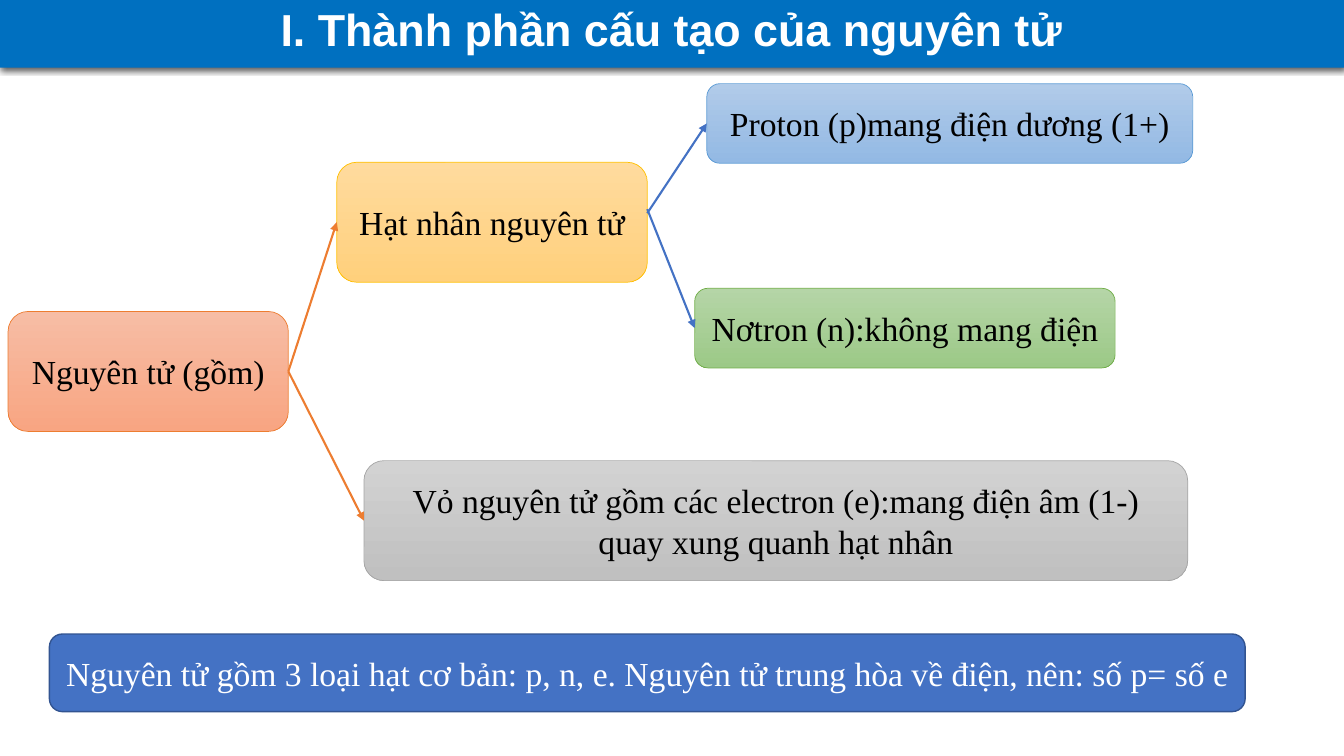
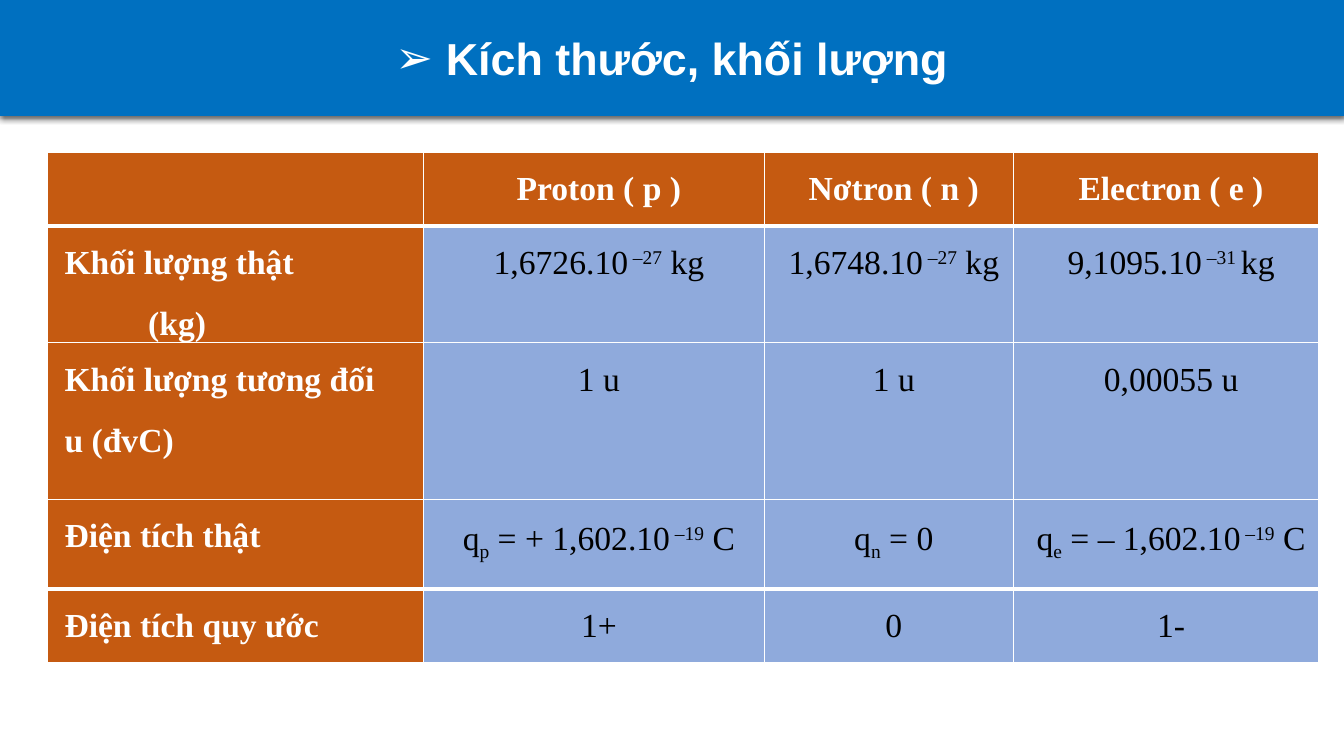
"""Build two slides on the parts of the atom."""
from dataclasses import dataclass

from lxml.etree import SubElement
from pptx import Presentation
from pptx.dml.color import RGBColor
from pptx.enum.shapes import MSO_CONNECTOR, MSO_SHAPE
from pptx.enum.text import MSO_ANCHOR, MSO_AUTO_SIZE, PP_ALIGN
from pptx.oxml import parse_xml
from pptx.oxml.ns import nsdecls, qn
from pptx.util import Inches, Pt


@dataclass(frozen=True)
class Theme:
    band: str = "0070C0"
    white: str = "FFFFFF"
    black: str = "000000"
    head: str = "C55A11"
    cell: str = "8FAADC"
    orange: str = "ED7D31"
    blue: str = "4472C4"
    sans: str = "Arial"
    serif: str = "Times New Roman"
    title: int = 32
    body: int = 24
    thin: int = 1
    thick: int = 3


THEME = Theme()
WIDTH, HEIGHT = 13.33, 7.5

PARTS_TITLE = "I. Thành phần cấu tạo của nguyên tử"
SIZES_TITLE = "Kích thước, khối lượng"

BOXES = {
    "atom": ("Nguyên tử (gồm)", (0.08, 3.09, 2.78, 1.19),
             ("F7BDA5", "F8A582"), THEME.orange),
    "core": ("Hạt nhân nguyên tử", (3.34, 1.61, 3.08, 1.19),
             ("FFDB9E", "FFD07C"), "FFC000"),
    "shell": ("Vỏ nguyên tử gồm các electron (e):mang điện âm (1-) "
              "quay xung quanh hạt nhân", (3.61, 4.57, 8.17, 1.19),
              ("D2D2D2", "C0C0C0"), "A5A5A5"),
    "proton": ("Proton (p)mang điện dương (1+)", (7.01, 0.83, 4.82, 0.79),
               ("B1CBE9", "93B9E4"), "5B9BD5"),
    "neutron": ("Nơtron (n):không mang điện", (6.89, 2.86, 4.17, 0.79),
                ("B5D5A7", "9CC987"), "70AD47"),
}
LINKS = [
    ("atom", "core", 0, THEME.orange),
    ("atom", "shell", 0, THEME.orange),
    ("core", "proton", 0.09, THEME.blue),
    ("core", "neutron", 0.13, THEME.blue),
]
SUM_TEXT = ("Nguyên tử gồm 3 loại hạt cơ bản: p, n, e. "
            "Nguyên tử trung hòa về điện, nên: số p= số e")
SUM_PLACE = (0.49, 6.29, 11.86, 0.77)
SUM_EDGE = "325491"

TABLE_AT = (0.47, 1.51)
COLS = [3.73, 3.38, 2.47, 3.03]
ROWS = [0.73, 1.16, 1.55, 0.89, 0.73]
THICK_EDGES = (1, 4)
INDENT, UNIT_INDENT = 0.1, 0.93
GRID = [
    ["", "Proton ( p )", "Nơtron ( n )", "Electron ( e )"],
    ["Khối lượng thật\n(kg)", "1,6726.10|^ –27| kg",
     "1,6748.10|^ –27| kg", "9,1095.10|^ –31 |kg"],
    ["Khối lượng tương đối\nu (đvC)", "1 u", "1 u", "0,00055 u"],
    ["Điện tích thật", "q|_p| = + 1,602.10|^ –19| C",
     "q|_n| = 0", "q|_e| = – 1,602.10|^ –19| C"],
    ["Điện tích quy ước", "1+", "0", "1-"],
]
SHIFTS = {"^": "30000", "_": "-25000"}


def rgb(code):
    return RGBColor.from_string(code)


def place(nums):
    return [Inches(num) for num in nums]


def style(run, color, size=THEME.body, face=THEME.serif, bold=False):
    font = run.font
    font.name, font.size, font.bold = face, Pt(size), bold
    font.color.rgb = rgb(color)


def add_page(deck, text, top, height, mark=None):
    page = deck.slides.add_slide(deck.slide_layouts[5])
    band = page.shapes.title
    band.left, band.top, band.width, band.height = place((0, top, WIDTH, height))
    band.fill.solid()
    band.fill.fore_color.rgb = rgb(THEME.band)
    band._element.spPr.append(parse_xml(
        f'<a:effectLst {nsdecls("a")}><a:outerShdw blurRad="{Pt(4.5)}" '
        f'dist="{Pt(1.5)}" dir="5400000" algn="t" rotWithShape="0">'
        f'<a:srgbClr val="{THEME.black}"><a:alpha val="63000"/></a:srgbClr>'
        '</a:outerShdw></a:effectLst>'))
    frame = band.text_frame
    frame.text = text
    frame.auto_size = MSO_AUTO_SIZE.NONE
    frame.vertical_anchor = MSO_ANCHOR.MIDDLE
    para = frame.paragraphs[0]
    para.alignment, para.line_spacing = PP_ALIGN.CENTER, 1.0
    style(para.runs[0], THEME.white, THEME.title, THEME.sans, True)
    if mark:
        props = para._p.get_or_add_pPr()
        props.set("marL", str(Inches(0.5)))
        props.set("indent", str(-Inches(0.5)))
        SubElement(props, qn("a:buFont")).set("typeface", THEME.sans)
        SubElement(props, qn("a:buChar")).set("char", mark)
    return page


def add_box(page, text, spot, fills, edge, width=0.5, color=THEME.black):
    box = page.shapes.add_shape(MSO_SHAPE.ROUNDED_RECTANGLE, *place(spot))
    box.shadow.inherit = False
    if len(fills) == 1:
        box.fill.solid()
        box.fill.fore_color.rgb = rgb(fills[0])
    else:
        box.fill.gradient()
        box.fill.gradient_angle = 270
        for stop, code in zip(box.fill.gradient_stops, fills):
            stop.color.rgb = rgb(code)
    box.line.color.rgb = rgb(edge)
    box.line.width = Pt(width)
    box.text_frame.text = text
    para = box.text_frame.paragraphs[0]
    para.alignment = PP_ALIGN.CENTER
    style(para.runs[0], color)
    return box


def add_link(page, start, end, lift, color):
    left = start.left + start.width
    top = start.top + start.height // 2 - Inches(lift)
    link = page.shapes.add_connector(
        MSO_CONNECTOR.STRAIGHT, left, top, end.left, end.top + end.height // 2)
    if not lift:
        link.begin_connect(start, 3)
    link.end_connect(end, 1)
    link.line.color.rgb = rgb(color)
    link.line.width = Pt(1.5)
    SubElement(link.line._get_or_add_ln(), qn("a:tailEnd")).set("type", "triangle")
    SubElement(link._element.spPr, qn("a:effectLst"))


def set_edges(cell, row):
    props = cell._tc.get_or_add_tcPr()
    weights = [THEME.thick if edge in THICK_EDGES else THEME.thin
               for edge in (row, row + 1)]
    sides = zip("LRTB", [THEME.thin, THEME.thin, *weights])
    for spot, (side, weight) in enumerate(sides):
        props.insert(spot, parse_xml(
            f'<a:ln{side} {nsdecls("a")} w="{Pt(weight)}"><a:solidFill>'
            f'<a:srgbClr val="{THEME.white}"/></a:solidFill></a:ln{side}>'))


def fill_cell(cell, text, row, col):
    head = row == 0 or col == 0
    cell.fill.solid()
    cell.fill.fore_color.rgb = rgb(THEME.head if head else THEME.cell)
    set_edges(cell, row)
    cell.margin_left = cell.margin_right = Inches(0.07)
    cell.margin_top = cell.margin_bottom = 0
    frame = cell.text_frame
    for spot, line in enumerate(text.split("\n") if text else []):
        para = frame.add_paragraph() if spot else frame.paragraphs[0]
        para.alignment = PP_ALIGN.CENTER if col else PP_ALIGN.JUSTIFY
        para.line_spacing = 1.5
        para.space_before = para.space_after = Pt(2)
        indent = UNIT_INDENT if line == "(kg)" else INDENT
        para._p.get_or_add_pPr().set("marL", str(Inches(indent)))
        for piece in line.split("|"):
            run = para.add_run()
            run.text = piece.lstrip("^_")
            style(run, THEME.white if head else THEME.black, bold=head)
            if piece[0] in SHIFTS:
                run._r.get_or_add_rPr().set("baseline", SHIFTS[piece[0]])


def add_grid(page):
    spot = place((*TABLE_AT, sum(COLS), sum(ROWS)))
    table = page.shapes.add_table(len(ROWS), len(COLS), *spot).table
    table.horz_banding = False
    for col, width in zip(table.columns, COLS):
        col.width = Inches(width)
    for row, height in zip(table.rows, ROWS):
        row.height = Inches(height)
    for row, texts in enumerate(GRID):
        for col, text in enumerate(texts):
            fill_cell(table.cell(row, col), text, row, col)


def main():
    deck = Presentation()
    deck.slide_width, deck.slide_height = place((WIDTH, HEIGHT))
    page = add_page(deck, PARTS_TITLE, -0.1, 0.77)
    boxes = {name: add_box(page, *parts) for name, parts in BOXES.items()}
    for start, end, lift, color in LINKS:
        add_link(page, boxes[start], boxes[end], lift, color)
    add_box(page, SUM_TEXT, SUM_PLACE, (THEME.blue,), SUM_EDGE, 1, THEME.white)
    add_grid(add_page(deck, SIZES_TITLE, 0, 1.15, "➢"))
    deck.save("out.pptx")


if __name__ == "__main__":
    main()
